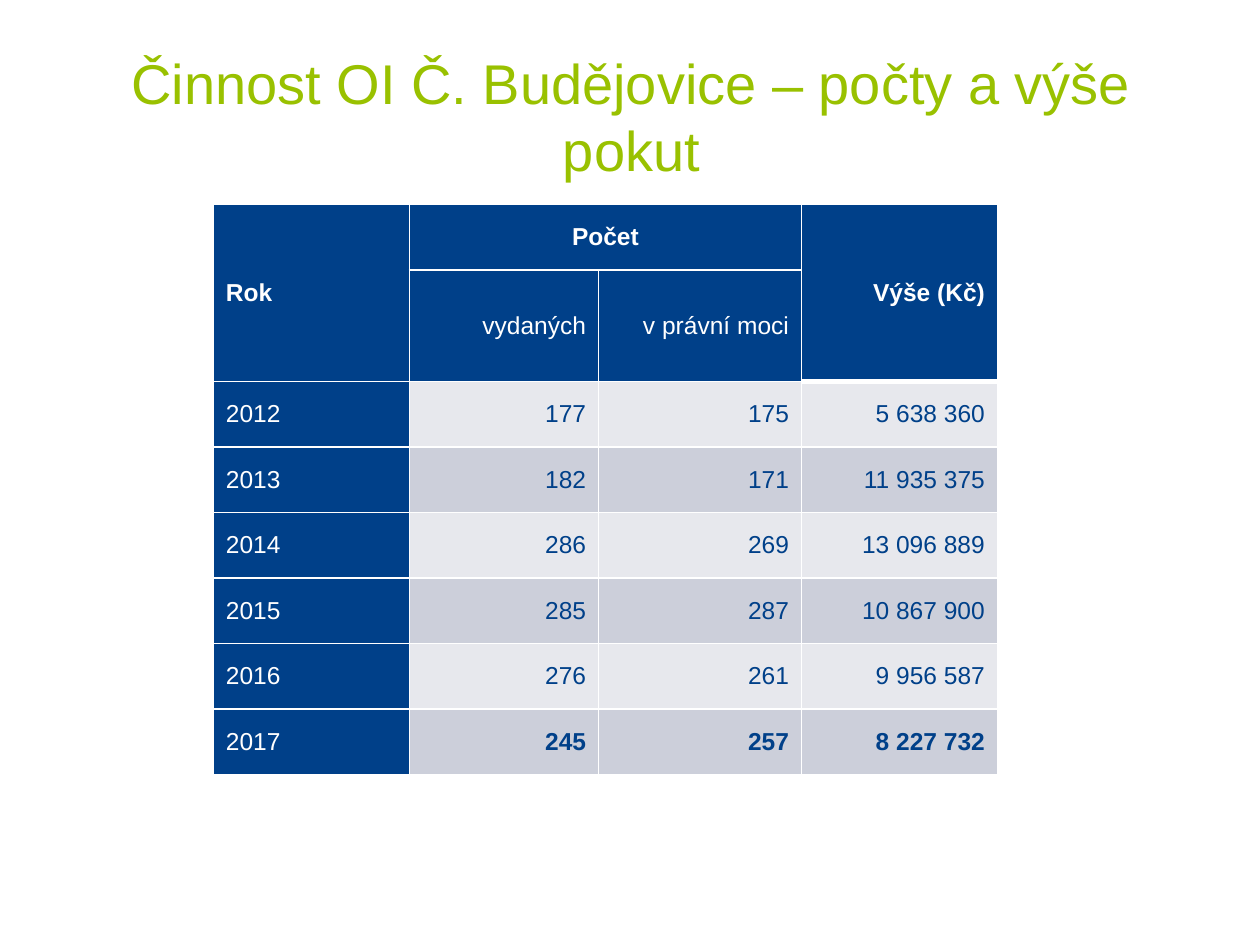
import pptx
import pptx.util
import pptx.dml.color
import pptx.enum.text
import pptx.oxml
import pptx.oxml.ns

Cm = pptx.util.Cm
Pt = pptx.util.Pt
RGB = pptx.dml.color.RGBColor
ALIGN = pptx.enum.text.PP_ALIGN
MIDDLE = pptx.enum.text.MSO_ANCHOR.MIDDLE

GREEN = RGB(0x99, 0xC1, 0x00)
BLUE = RGB(0x00, 0x40, 0x89)
WHITE = RGB(0xFF, 0xFF, 0xFF)
LIGHT = RGB(0xE7, 0xE8, 0xED)
DARK = RGB(0xCC, 0xCF, 0xDA)

ROWS = [
    ["Rok", "Počet", "", "Výše (Kč)"],
    ["", "vydaných", "v právní moci", ""],
    ["2012", "177", "175", "5 638 360"],
    ["2013", "182", "171", "11 935 375"],
    ["2014", "286", "269", "13 096 889"],
    ["2015", "285", "287", "10 867 900"],
    ["2016", "276", "261", "9 956 587"],
    ["2017", "245", "257", "8 227 732"],
]
WIDTHS = [3.95, 3.82, 4.09, 3.95]
HEIGHTS = [1.32, 2.25] + [1.32] * 6
HEADS = 2


def style(para, size, color, bold, align):
    para.alignment = align
    for run in para.runs:
        run.font.name = "Arial"
        run.font.size = Pt(size)
        run.font.bold = bold
        run.font.color.rgb = color


def border(cell, base):
    """Draw white cell borders, 1 pt wide except for the bottom one."""
    props = cell._tc.get_or_add_tcPr()
    for side, width in (("L", 1), ("R", 1), ("T", 1), ("B", base)):
        props.append(pptx.oxml.parse_xml(
            f'<a:ln{side} {pptx.oxml.ns.nsdecls("a")} w="{Pt(width)}">'
            f'<a:solidFill><a:srgbClr val="{WHITE}"/></a:solidFill>'
            f'</a:ln{side}>'))


deck = pptx.Presentation()
deck.slide_width = Cm(25.4)
deck.slide_height = Cm(19.05)
slide = deck.slides.add_slide(deck.slide_layouts[5])

title = slide.shapes.title
title.left, title.top = Cm(1.3), Cm(0.74)
title.width, title.height = Cm(22.86), Cm(3.18)
title.text_frame.text = "Činnost OI Č. Budějovice – počty a výše pokut"
title.text_frame.vertical_anchor = MIDDLE
style(title.text_frame.paragraphs[0], 32, GREEN, False, ALIGN.CENTER)

table = slide.shapes.add_table(
    len(ROWS), len(WIDTHS), Cm(4.3), Cm(4.12),
    Cm(sum(WIDTHS)), Cm(sum(HEIGHTS))).table
for column, width in zip(table.columns, WIDTHS):
    column.width = Cm(width)
for row, height in zip(table.rows, HEIGHTS):
    row.height = Cm(height)

for r, texts in enumerate(ROWS):
    for c, text in enumerate(texts):
        cell = table.cell(r, c)
        head = r < HEADS or c == 0
        border(cell, 3 if r < HEADS and c == 3 else 1)
        cell.fill.solid()
        cell.fill.fore_color.rgb = BLUE if head else (LIGHT, DARK)[r % 2]
        cell.vertical_anchor = MIDDLE
        cell.text_frame.text = text
        if c == 0:
            align = ALIGN.LEFT
        else:
            align = ALIGN.CENTER if text == "Počet" else ALIGN.RIGHT
        bold = r == 0 or (r == len(ROWS) - 1 and c > 0)
        style(cell.text_frame.paragraphs[0], 14,
              WHITE if head else BLUE, bold, align)

table.cell(0, 0).merge(table.cell(1, 0))
table.cell(0, 1).merge(table.cell(0, 2))
table.cell(0, 3).merge(table.cell(1, 3))

deck.save("out.pptx")
